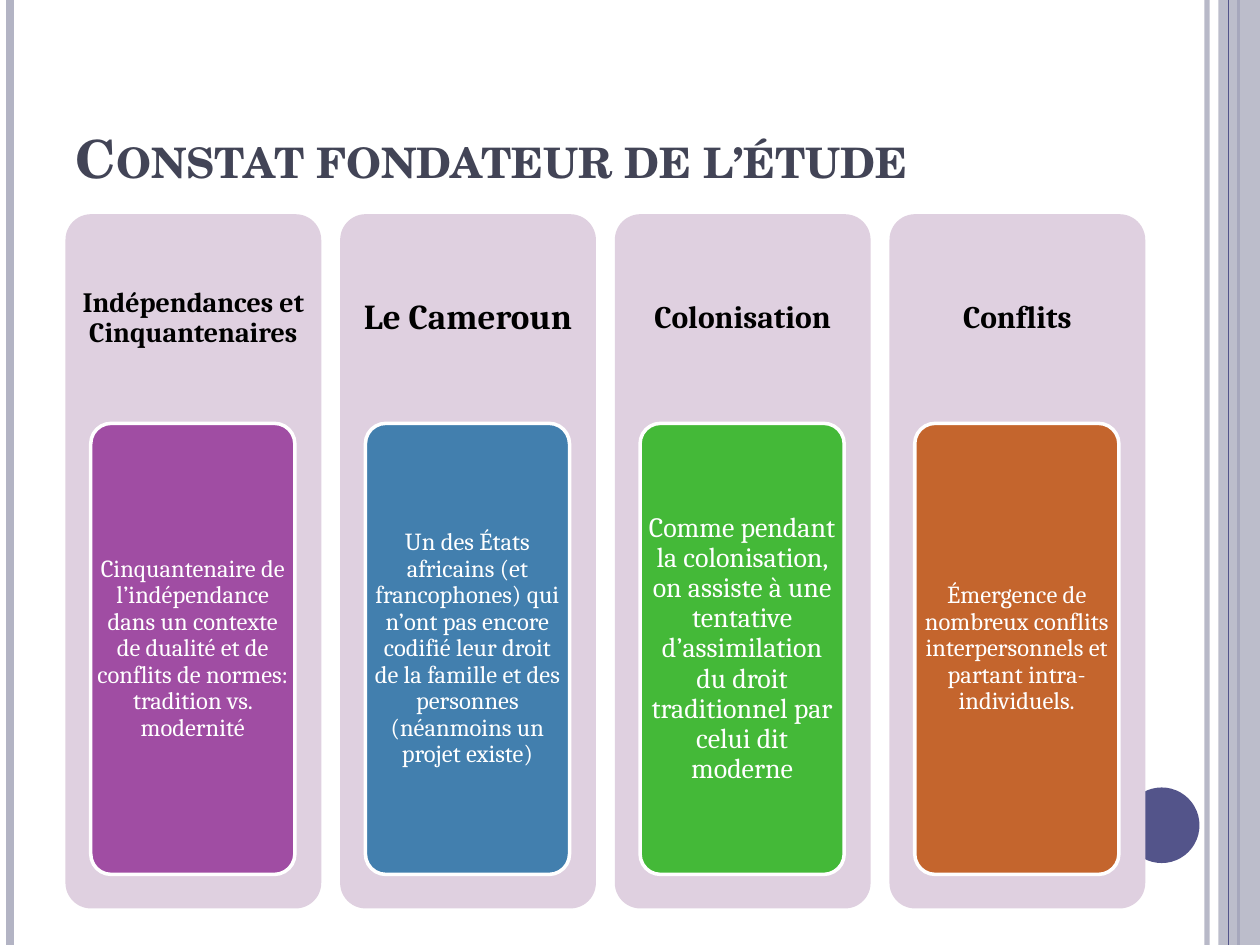
import pptx
import pptx.util
import pptx.dml.color
import pptx.enum.shapes
import pptx.enum.text
import pptx.oxml.ns
import lxml.etree

Inches = pptx.util.Inches
Pt = pptx.util.Pt
SHAPE = pptx.enum.shapes.MSO_SHAPE
ALIGN = pptx.enum.text.PP_ALIGN
ANCHOR = pptx.enum.text.MSO_ANCHOR
qn = pptx.oxml.ns.qn


def paint(fmt, color, alpha=None):
    fmt.solid()
    fmt.fore_color.rgb = pptx.dml.color.RGBColor.from_string(color)
    if alpha:
        clr = fmt._xPr.find(qn("a:solidFill"))[0]
        lxml.etree.SubElement(clr, qn("a:alpha")).set("val", str(alpha * 1000))


def write(sp, text, size, color, bold, inset):
    tf = sp.text_frame
    tf.word_wrap = True
    tf.vertical_anchor = ANCHOR.MIDDLE
    tf.margin_left = tf.margin_right = Inches(inset)
    tf.margin_top = tf.margin_bottom = Inches(inset)
    p = tf.paragraphs[0]
    p.text = text
    p.alignment = ALIGN.CENTER
    p.line_spacing = 0.9
    p.font.name = "Cambria"
    p.font.size = Pt(size)
    p.font.bold = bold
    paint(p.font.fill, color)


prs = pptx.Presentation()
prs.slide_width = Inches(10)
prs.slide_height = Inches(7.5)
s = prs.slides.add_slide(prs.slide_layouts[5])

rules = [
    (9.58, "B3B4C4", 3, 93),
    (0.08, "B3B4C4", 4.5, None),
    (9.83, "53548A", 1.5, None),
    (9.75, "53548A", 0.75, None),
]
for x, color, width, alpha in rules:
    if x == 9.75:
        band = s.shapes.add_shape(SHAPE.RECTANGLE, Inches(9.67), 0, Inches(0.33), Inches(7.5))
        band.shadow.inherit = False
        paint(band.fill, "B3B4C4", 87)
        band.line.fill.background()
    line = s.shapes.add_connector(
        pptx.enum.shapes.MSO_CONNECTOR.STRAIGHT, Inches(x), 0, Inches(x), Inches(7.5))
    line.line.width = Pt(width)
    paint(line.line.fill, color, alpha)
    lxml.etree.SubElement(line._element.spPr, qn("a:effectLst"))

dot = s.shapes.add_shape(SHAPE.OVAL, Inches(8.92), Inches(6.25), Inches(0.6), Inches(0.6))
dot.shadow.inherit = False
paint(dot.fill, "53548A")
dot.line.fill.background()

title = s.shapes.title
title.left, title.top = Inches(0.5), Inches(0.3)
title.width, title.height = Inches(8.17), Inches(1.25)
tf = title.text_frame
tf.vertical_anchor = ANCHOR.BOTTOM
p = tf.paragraphs[0]
p.alignment = ALIGN.LEFT
r = p.add_run()
r.text = "Constat fondateur de l’étude"
r.font.name = "TeX Gyre Schola"
r.font.size = Pt(30)
r.font.bold = True
paint(r.font.fill, "424456")
r._r.get_or_add_rPr().set("cap", "small")

columns = [
    ("Indépendances et Cinquantenaires", 16, "A04DA3", 14,
     "Cinquantenaire de l’indépendance dans un contexte de dualité et de "
     "conflits de normes: tradition vs. modernité"),
    ("Le Cameroun", 20, "427FAE", 14,
     "Un des États africains (et francophones) qui n’ont pas encore codifié leur "
     "droit de la famille et des personnes (néanmoins un projet existe)"),
    ("Colonisation", 18, "44B938", 16,
     "Comme pendant la colonisation, on assiste à une tentative d’assimilation "
     "du droit traditionnel par celui dit moderne"),
    ("Conflits", 18, "C4652D", 14,
     "Émergence de nombreux conflits interpersonnels et partant intra-individuels."),
]
for i, (heading, heading_size, color, body_size, body) in enumerate(columns):
    x = 0.52 + 2.18 * i
    panel = s.shapes.add_shape(
        SHAPE.ROUNDED_RECTANGLE, Inches(x), Inches(1.7), Inches(2.03), Inches(5.51))
    panel.adjustments[0] = 0.1
    panel.shadow.inherit = False
    paint(panel.fill, "DFD0E0")
    panel.line.fill.background()

    head = s.shapes.add_textbox(Inches(x), Inches(1.7), Inches(2.03), Inches(1.65))
    write(head, heading, heading_size, "000000", True, 0.07)

    card = s.shapes.add_shape(
        SHAPE.ROUNDED_RECTANGLE, Inches(x + 0.2), Inches(3.36), Inches(1.62), Inches(3.58))
    card.adjustments[0] = 0.1
    card.shadow.inherit = False
    paint(card.fill, color)
    paint(card.line.fill, "FFFFFF")
    card.line.width = Pt(2)
    write(card, body, body_size, "FFFFFF", False, 0)

prs.save("out.pptx")
